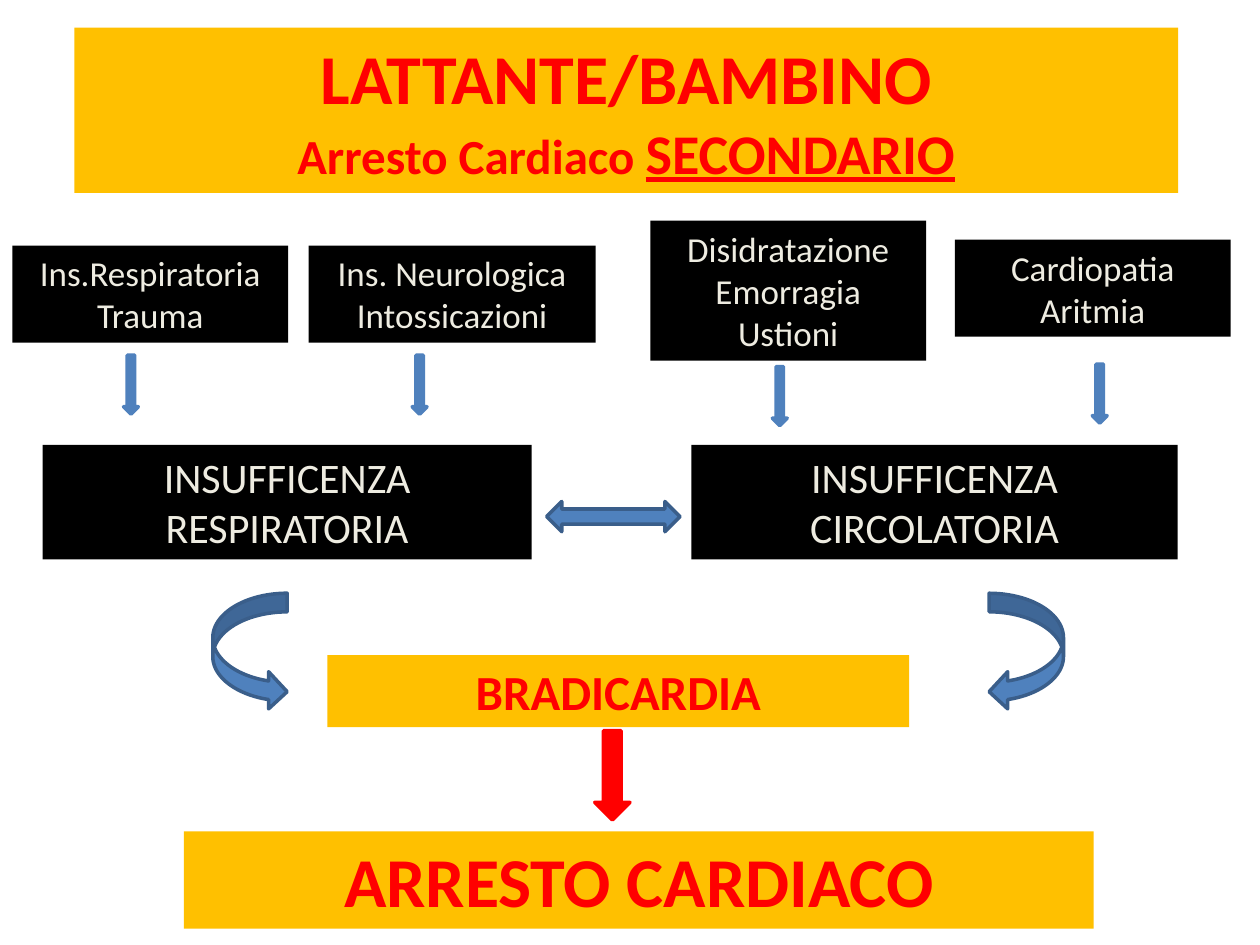
from dataclasses import dataclass

import pptx
import pptx.dml.color
import pptx.enum.shapes
import pptx.enum.text
import pptx.util

Cm = pptx.util.Cm
ARROWS = pptx.enum.shapes.MSO_SHAPE

COLORS = {
    "gold": "FFC000",
    "red": "FF0000",
    "black": "000000",
    "cream": "EEECE1",
    "blue": "4F81BD",
    "navy": "3A5E8A",
}


@dataclass
class Phrase:
    text: str
    size: int
    underline: bool = False


@dataclass
class Panel:
    left: float
    top: float
    width: float
    height: float
    lines: list[list[Phrase]]
    highlighted: bool = False


@dataclass
class Arrow:
    kind: pptx.enum.shapes.MSO_SHAPE
    left: float
    top: float
    width: float
    height: float
    fill: str = "blue"
    outline: str = "navy"


def rgb(name: str) -> pptx.dml.color.RGBColor:
    return pptx.dml.color.RGBColor.from_string(COLORS[name])


def add_filled(slide, kind, item: Panel | Arrow, fill: str):
    shape = slide.shapes.add_shape(
        kind, Cm(item.left), Cm(item.top), Cm(item.width), Cm(item.height)
    )
    shape.shadow.inherit = False
    shape.fill.solid()
    shape.fill.fore_color.rgb = rgb(fill)
    return shape


def draw_panel(slide, panel: Panel) -> None:
    fill, ink = ("gold", "red") if panel.highlighted else ("black", "cream")
    shape = add_filled(slide, ARROWS.RECTANGLE, panel, fill)
    shape.line.fill.background()
    frame = shape.text_frame
    frame.word_wrap = True
    frame.auto_size = pptx.enum.text.MSO_AUTO_SIZE.SHAPE_TO_FIT_TEXT
    frame.vertical_anchor = pptx.enum.text.MSO_ANCHOR.TOP
    frame.margin_left = frame.margin_right = Cm(0.13)
    frame.margin_top = frame.margin_bottom = Cm(0.13)
    for index, phrases in enumerate(panel.lines):
        paragraph = frame.add_paragraph() if index else frame.paragraphs[0]
        paragraph.alignment = pptx.enum.text.PP_ALIGN.CENTER
        for phrase in phrases:
            run = paragraph.add_run()
            run.text = phrase.text
            run.font.name = "Calibri"
            run.font.size = pptx.util.Pt(phrase.size)
            run.font.bold = panel.highlighted
            run.font.underline = phrase.underline
            run.font.color.rgb = rgb(ink)


def draw_arrow(slide, arrow: Arrow) -> None:
    shape = add_filled(slide, arrow.kind, arrow, arrow.fill)
    shape.line.color.rgb = rgb(arrow.outline)
    shape.line.width = pptx.util.Pt(2)


def cause(left: float, top: float, width: float, height: float, *names: str) -> Panel:
    return Panel(left, top, width, height, [[Phrase(name, 20)] for name in names])


def cause_arrow(left: float, top: float) -> Arrow:
    return Arrow(ARROWS.DOWN_ARROW, left, top, 0.3, 1.19, outline="blue")


PANELS = [
    Panel(1.5, 0.56, 22.25, 3.33, [
        [Phrase("LATTANTE/BAMBINO", 40)],
        [Phrase("Arresto Cardiaco ", 28), Phrase("SECONDARIO", 32, True)],
    ], True),
    cause(0.25, 4.95, 5.56, 1.96, "Ins.Respiratoria", "Trauma"),
    cause(6.22, 4.95, 5.79, 1.96, "Ins. Neurologica", "Intossicazioni"),
    cause(13.11, 4.45, 5.56, 2.82, "Disidratazione", "Emorragia", "Ustioni"),
    cause(19.25, 4.83, 5.56, 1.96, "Cardiopatia", "Aritmia"),
    Panel(0.86, 8.97, 9.86, 2.31, [[Phrase("INSUFFICENZA RESPIRATORIA", 24)]]),
    Panel(13.94, 8.97, 9.8, 2.31, [[Phrase("INSUFFICENZA CIRCOLATORIA", 24)]]),
    Panel(6.6, 13.21, 11.73, 1.45, [[Phrase("BRADICARDIA", 28)]], True),
    Panel(3.71, 16.76, 18.34, 1.96, [[Phrase("ARRESTO CARDIACO", 40)]], True),
]

FLOW = [
    cause_arrow(2.49, 7.16),
    cause_arrow(8.31, 7.16),
    cause_arrow(15.57, 7.39),
    cause_arrow(22.02, 7.34),
    Arrow(ARROWS.LEFT_RIGHT_ARROW, 11.02, 10.11, 2.69, 0.61),
    Arrow(ARROWS.CURVED_RIGHT_ARROW, 4.29, 11.96, 1.5, 2.36),
    Arrow(ARROWS.CURVED_LEFT_ARROW, 19.94, 11.96, 1.5, 2.36),
    Arrow(ARROWS.DOWN_ARROW, 11.99, 14.73, 0.71, 1.8, "red", "red"),
]


def main() -> None:
    deck = pptx.Presentation()
    deck.slide_width, deck.slide_height = Cm(25.4), Cm(19.05)
    slide = deck.slides.add_slide(deck.slide_layouts[6])
    for panel in PANELS:
        draw_panel(slide, panel)
    for arrow in FLOW:
        draw_arrow(slide, arrow)
    deck.save("out.pptx")


if __name__ == "__main__":
    main()
